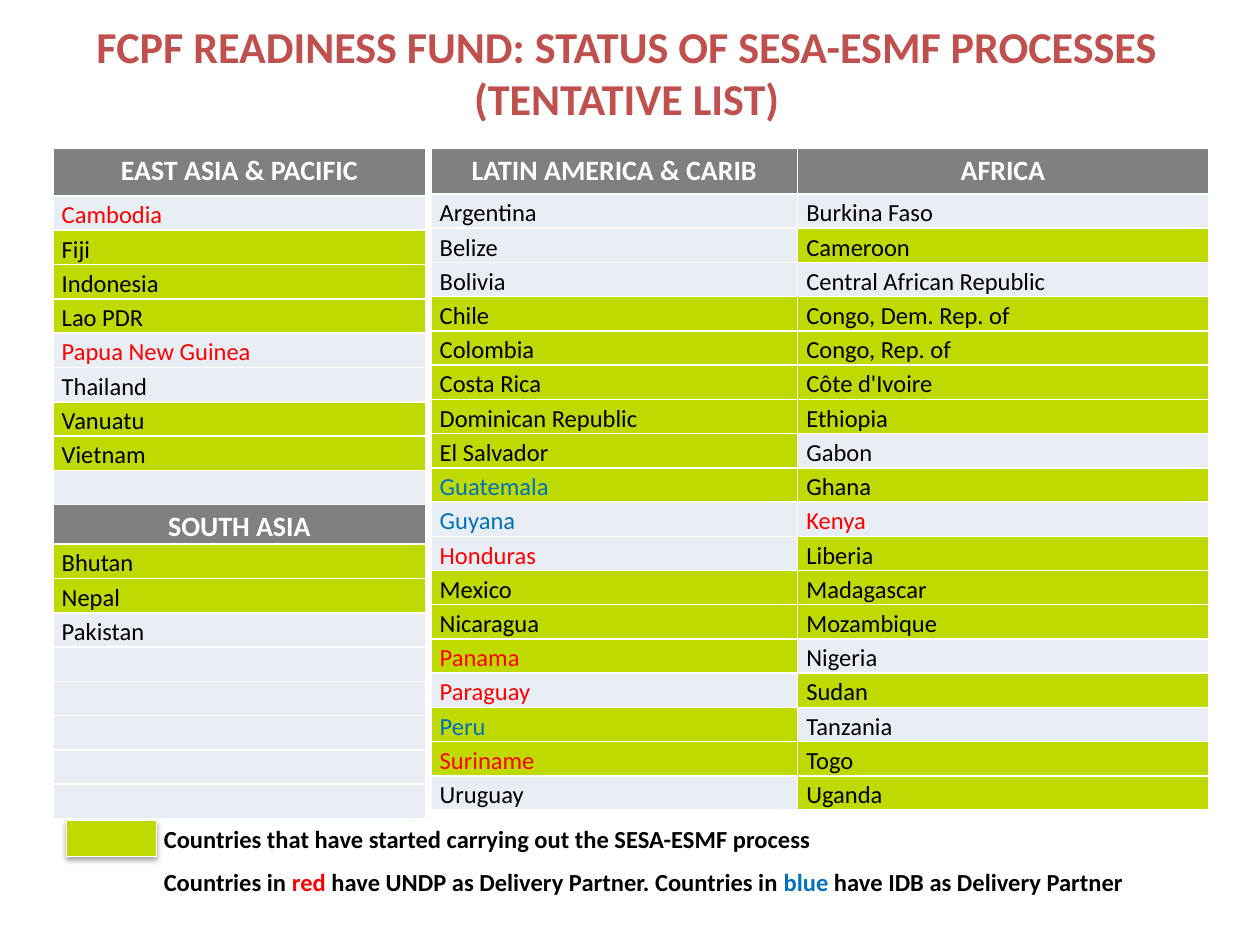
from lxml.etree import SubElement
from pptx import Presentation
from pptx.dml.color import RGBColor
from pptx.enum.shapes import MSO_SHAPE
from pptx.enum.text import MSO_ANCHOR, MSO_AUTO_SIZE, PP_ALIGN
from pptx.oxml.ns import qn
from pptx.util import Inches, Pt

GRID_COLUMNS, GRID_ROWS = 100, 75
COUNTRY_ROW = 2.72

PACIFIC = ["Cambodia", "Fiji", "Indonesia", "Lao PDR", "Papua New Guinea",
           "Thailand", "Vanuatu", "Vietnam"]
SOUTH_ASIA = ["Bhutan", "Nepal", "Pakistan"]
LATIN_AMERICA = ["Argentina", "Belize", "Bolivia", "Chile", "Colombia",
                 "Costa Rica", "Dominican Republic", "El Salvador", "Guatemala",
                 "Guyana", "Honduras", "Mexico", "Nicaragua", "Panama",
                 "Paraguay", "Peru", "Suriname", "Uruguay"]
AFRICA = ["Burkina Faso", "Cameroon", "Central African Republic",
          "Congo, Dem. Rep. of", "Congo, Rep. of", "Côte d'Ivoire", "Ethiopia",
          "Gabon", "Ghana", "Kenya", "Liberia", "Madagascar", "Mozambique",
          "Nigeria", "Sudan", "Tanzania", "Togo", "Uganda"]
HEADINGS = {"EAST ASIA & PACIFIC", "SOUTH ASIA", "LATIN AMERICA & CARIB", "AFRICA"}
NOT_STARTED = {"", "Cambodia", "Papua New Guinea", "Thailand", "Pakistan",
               "Argentina", "Belize", "Bolivia", "Guyana", "Honduras", "Paraguay",
               "Uruguay", "Burkina Faso", "Central African Republic", "Gabon",
               "Kenya", "Nigeria", "Tanzania"}
UNDP_COUNTRIES = {"Cambodia", "Papua New Guinea", "Honduras", "Panama",
                  "Paraguay", "Suriname", "Kenya"}
IDB_COUNTRIES = {"Guatemala", "Guyana", "Peru"}


def colour(hex_string):
    return RGBColor.from_string(hex_string)


class StatusSlide:
    font_name = "Calibri"
    title_red, red, blue = "C0504D", "FF0000", "0070C0"
    black, white, grey = "000000", "FFFFFF", "808080"
    green, pale = "BEDA00", "E9EDF4"

    def __init__(self, presentation):
        self.column = presentation.slide_width / GRID_COLUMNS
        self.row = presentation.slide_height / GRID_ROWS
        self.slide = presentation.slides.add_slide(presentation.slide_layouts[5])

    def box(self, left, top, width, height):
        """Turn grid columns and rows into a position and size."""
        return (round(left * self.column), round(top * self.row),
                round(width * self.column), round(height * self.row))

    def style(self, paragraph, size, hex_string, bold, align=PP_ALIGN.LEFT):
        paragraph.alignment = align
        font = paragraph.font
        font.name, font.size, font.bold = self.font_name, Pt(size), bold
        font.color.rgb = colour(hex_string)

    def title(self, text, *place):
        title = self.slide.shapes.title
        title.left, title.top, title.width, title.height = self.box(*place)
        frame = title.text_frame
        frame.text = text
        frame.auto_size = MSO_AUTO_SIZE.NONE
        frame.vertical_anchor = MSO_ANCHOR.MIDDLE
        self.style(frame.paragraphs[0], 25.2, self.title_red, True, PP_ALIGN.CENTER)

    def table(self, left, top, widths, heights, lists):
        place = self.box(left, top, sum(widths), sum(heights))
        table = self.slide.shapes.add_table(len(heights), len(widths), *place).table
        table.first_row = table.horz_banding = False
        for row, height in zip(table.rows, heights):
            row.height = round(height * self.row)
        for index, (width, names) in enumerate(zip(widths, lists)):
            table.columns[index].width = round(width * self.column)
            for number, name in enumerate(names):
                self.cell(table.cell(number, index), name)

    def cell(self, cell, name):
        cell.margin_left = cell.margin_right = Inches(0.07)
        cell.margin_top = cell.margin_bottom = 0
        self.borders(cell)
        cell.fill.solid()
        paragraph = cell.text_frame.paragraphs[0]
        paragraph.line_spacing = 1.15
        if name in HEADINGS:
            fill = self.grey
            self.style(paragraph, 16, self.white, True, PP_ALIGN.CENTER)
        else:
            fill = self.pale if name in NOT_STARTED else self.green
            text_colour = (self.red if name in UNDP_COUNTRIES
                           else self.blue if name in IDB_COUNTRIES else self.black)
            self.style(paragraph, 14, text_colour, False)
        cell.fill.fore_color.rgb = colour(fill)
        if name:
            paragraph.add_run().text = name
        else:
            SubElement(paragraph._p, qn("a:endParaRPr"), sz="1400")

    def borders(self, cell):
        properties = cell._tc.get_or_add_tcPr()
        for side in ("lnL", "lnR", "lnT", "lnB"):
            line = SubElement(properties, qn(f"a:{side}"), w=str(Pt(1)))
            fill = SubElement(line, qn("a:solidFill"))
            SubElement(fill, qn("a:srgbClr"), val=self.white)

    def legend(self, parts, *place):
        """Add one bold line made of (text, colour) parts."""
        frame = self.slide.shapes.add_textbox(*self.box(*place)).text_frame
        frame.word_wrap = True
        frame.margin_left, frame.margin_top = Inches(0.2), Inches(0.08)
        paragraph = frame.paragraphs[0]
        self.style(paragraph, 14, self.black, True)
        for text, hex_string in parts:
            run = paragraph.add_run()
            run.text = text
            if hex_string != self.black:
                run.font.color.rgb = colour(hex_string)

    def swatch(self, *place):
        shape = self.slide.shapes.add_shape(MSO_SHAPE.RECTANGLE, *self.box(*place))
        shape.fill.solid()
        shape.fill.fore_color.rgb = colour(self.green)
        shape.line.color.rgb = colour(self.white)
        shape.line.width = Pt(0.75)
        shape.shadow.inherit = False
        effects = shape._element.spPr.find(qn("a:effectLst"))
        shadow = SubElement(effects, qn("a:outerShdw"), blurRad=str(Pt(3.1)),
                            dist=str(Pt(1.8)), dir="5400000", rotWithShape="0")
        shade = SubElement(shadow, qn("a:srgbClr"), val=self.black)
        SubElement(shade, qn("a:alpha"), val="35000")


def main():
    presentation = Presentation()
    presentation.slide_width, presentation.slide_height = Inches(10), Inches(7.5)
    status = StatusSlide(presentation)
    status.title("FCPF READINESS FUND: STATUS OF SESA-ESMF PROCESSES\v(TENTATIVE LIST)",
                 3.3, 0.9, 92.9, 9.6)

    asia = ["EAST ASIA & PACIFIC", *PACIFIC, "", "SOUTH ASIA", *SOUTH_ASIA, *[""] * 5]
    asia_heights = [3.75] + [3.12 if name in HEADINGS else COUNTRY_ROW
                             for name in asia[1:]]
    status.table(4.2, 11.8, [29.6], asia_heights, [asia])
    status.legend([("Countries that have started carrying out the SESA-ESMF process",
                    status.black)], 11, 64.6, 74.8, 3.7)
    status.swatch(5.3, 65.1, 7.1, 2.9)
    status.table(34.2, 11.8, [29.1, 32.6], [3.6] + [COUNTRY_ROW] * len(AFRICA),
                 [["LATIN AMERICA & CARIB", *LATIN_AMERICA], ["AFRICA", *AFRICA]])
    status.legend([("Countries in ", status.black), ("red", status.red),
                   (" have UNDP as Delivery Partner. Countries in ", status.black),
                   ("blue", status.blue),
                   (" have IDB as Delivery Partner", status.black)],
                  11, 68, 84, 3.7)
    presentation.save("out.pptx")


if __name__ == "__main__":
    main()
